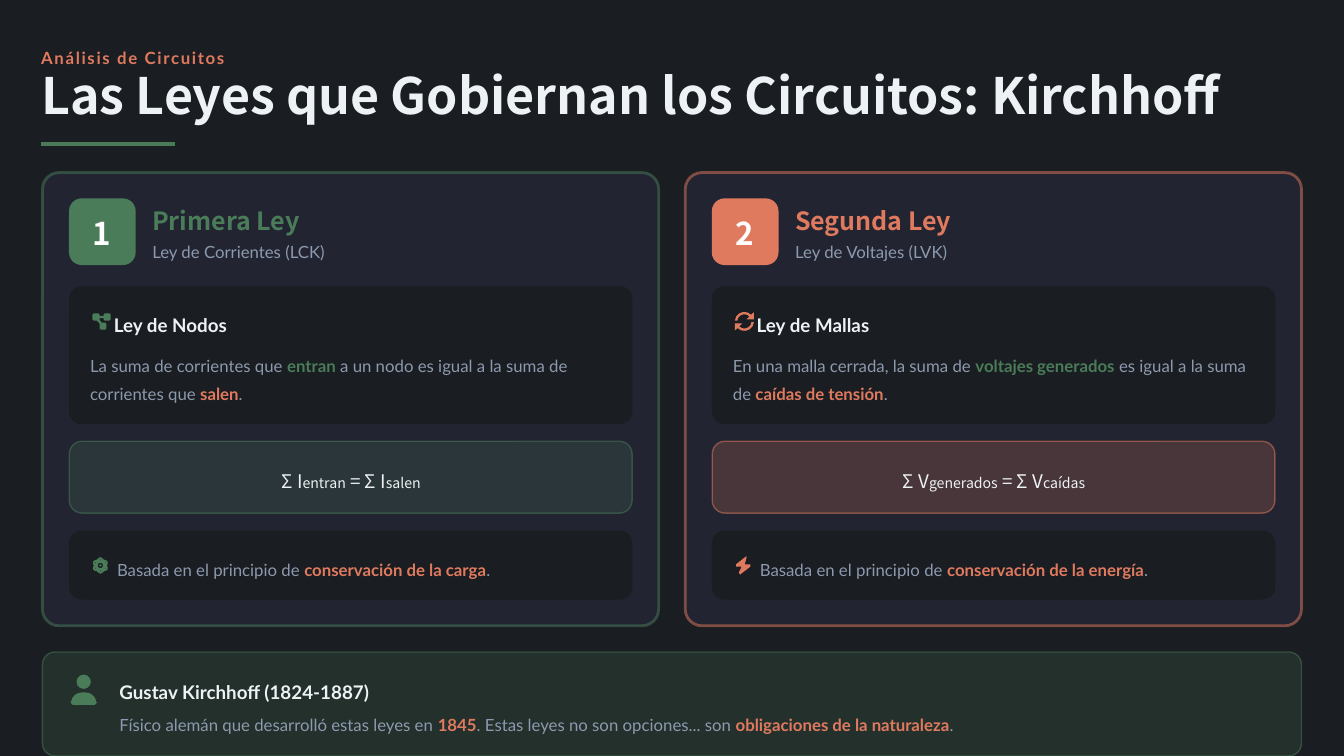
from math import cos, sin, radians

from pptx import Presentation
from pptx.dml.color import RGBColor
from pptx.enum.shapes import MSO_SHAPE as SHAPE
from pptx.enum.text import MSO_ANCHOR as ANCHOR, PP_ALIGN as ALIGN
from pptx.oxml import parse_xml
from pptx.oxml.ns import nsdecls, qn
from pptx.util import Cm, Pt

DARK = RGBColor(0x1A, 0x1D, 0x21)
NAVY = RGBColor(0x2B, 0x2D, 0x42)
GREEN = RGBColor(0x4A, 0x7C, 0x59)
CORAL = RGBColor(0xE0, 0x7A, 0x5F)
LIGHT = RGBColor(0xED, 0xF2, 0xF4)
GREY = RGBColor(0x8D, 0x99, 0xAE)
WHITE = RGBColor(0xFF, 0xFF, 0xFF)
BODY, DISPLAY = "Lato", "Noto Sans CJK SC"

# Content: a run is (text, style)
STYLES = {
    "plain": {},
    "green": {"color": GREEN, "bold": True},
    "coral": {"color": CORAL, "bold": True},
    "sub": {"size": 10.1},
}
KICKER = "Análisis de Circuitos"
TITLE = "Las Leyes que Gobiernan los Circuitos: Kirchhoff"
LAWS = [
    {"color": GREEN, "name": "Primera Ley", "subtitle": "Ley de Corrientes (LCK)",
     "icons": ("nodes", "atom"), "rule": "Ley de Nodos",
     "text": [("La suma de corrientes que ", "plain"), ("entran", "green"),
              (" a un nodo es igual a la suma de corrientes que ", "plain"),
              ("salen", "coral"), (".", "plain")],
     "formula": [("Σ I", "plain"), ("entran", "sub"), (" = Σ I", "plain"), ("salen", "sub")],
     "principle": "conservación de la carga"},
    {"color": CORAL, "name": "Segunda Ley", "subtitle": "Ley de Voltajes (LVK)",
     "icons": ("loop", "bolt"), "rule": "Ley de Mallas",
     "text": [("En una malla cerrada, la suma de ", "plain"), ("voltajes generados", "green"),
              (" es igual a la suma de ", "plain"),
              ("caídas de tensión", "coral"), (".", "plain")],
     "formula": [("Σ V", "plain"), ("generados", "sub"), (" = Σ V", "plain"), ("caídas", "sub")],
     "principle": "conservación de la energía"},
]
AUTHOR = "Gustav Kirchhoff (1824-1887)"
AUTHOR_TEXT = [("Físico alemán que desarrolló estas leyes en ", "plain"), ("1845", "coral"),
               (". Estas leyes no son opciones... son ", "plain"),
               ("obligaciones de la naturaleza", "coral"), (".", "plain")]


# Icon outlines, in cm around the icon centre
def arc(rx, ry=None, start=0, end=360, cx=0, cy=0, step=30):
    ry = rx if ry is None else ry
    return [(cx + rx * cos(radians(a)), cy + ry * sin(radians(a)))
            for a in range(start, end + 1, step)]


def atom():
    petals = [((0.19 - 0.02 * cos(radians(6 * a))) * cos(radians(a)),
               (0.19 - 0.02 * cos(radians(6 * a))) * sin(radians(a)))
              for a in range(0, 360, 15)]
    holes = [arc(0.02, cx=0.14 * cos(radians(a)), cy=0.14 * sin(radians(a)), step=120)
             for a in range(30, 390, 60)]
    return [petals, *holes, arc(0.07, step=45), arc(0.03, step=60)]


def loop():
    arrow = (arc(0.24, start=185, end=315, step=26)
             + [(0.24, -0.23), (0.24, -0.05), (0.05, -0.05)]
             + arc(0.18, start=185, end=315, step=26)[::-1])
    return [arrow, [(-x, -y) for x, y in arrow]]


NODES = [(-0.23, -0.17), (-0.2, -0.2), (-0.08, -0.2), (-0.05, -0.17), (-0.05, -0.14),
         (0.05, -0.14), (0.05, -0.17), (0.08, -0.2), (0.2, -0.2), (0.23, -0.17),
         (0.23, -0.05), (0.2, -0.02), (0.08, -0.02), (0.05, -0.05), (0.05, -0.08),
         (-0.05, -0.08), (-0.05, -0.04), (0, 0.03), (0.09, 0.03), (0.12, 0.06),
         (0.12, 0.18), (0.09, 0.21), (-0.02, 0.21), (-0.05, 0.18), (-0.05, 0.05),
         (-0.12, -0.02), (-0.2, -0.02), (-0.23, -0.05)]
BOLT = [(0.09, -0.22), (0.04, -0.03), (0.18, -0.03), (0.18, 0.03), (-0.08, 0.23),
        (-0.11, 0.18), (-0.04, 0.03), (-0.18, 0.03), (-0.18, -0.03), (0.06, -0.22)]
PERSON_BODY = [(-0.33, 0.33), *arc(0.27, start=190, end=270, cx=-0.05, cy=0.34, step=20),
               *arc(0.27, start=270, end=350, cx=0.05, cy=0.34, step=20),
               (0.33, 0.33), (0.28, 0.38), (-0.28, 0.38)]
ICONS = {
    "nodes": [NODES],
    "loop": loop(),
    "atom": atom(),
    "bolt": [BOLT],
    "person": [arc(0.18, cy=-0.2), PERSON_BODY],
}


# Drawing helpers, lengths in cm
def set_alpha(fill_parent, percent):
    color = next(fill_parent.iter(qn("a:srgbClr")))
    color.append(parse_xml(f'<a:alpha {nsdecls("a")} val="{percent * 1000}"/>'))


def box(x, y, w, h, fill, radius=0.32, alpha=None, line=None, width=1):
    kind = SHAPE.ROUNDED_RECTANGLE if radius else SHAPE.RECTANGLE
    sp = s.shapes.add_shape(kind, Cm(x), Cm(y), Cm(w), Cm(h))
    sp.shadow.inherit = False
    if radius:
        sp.adjustments[0] = radius / min(w, h)
    sp.fill.solid()
    sp.fill.fore_color.rgb = fill
    if alpha:
        set_alpha(sp._element.spPr.find(qn("a:solidFill")), alpha)
    if line is None:
        sp.line.fill.background()
    else:
        sp.line.color.rgb = line
        sp.line.width = Pt(width)
        set_alpha(sp._element.spPr.find(qn("a:ln")), 50)


def icon(name, cx, cy, color):
    contours = [[(Cm(cx + x), Cm(cy + y)) for x, y in c] for c in ICONS[name]]
    builder = s.shapes.build_freeform(*contours[0][0], scale=1.0)
    builder.add_line_segments(contours[0][1:], close=True)
    for contour in contours[1:]:
        builder.move_to(*contour[0])
        builder.add_line_segments(contour[1:], close=True)
    sp = builder.convert_to_shape()
    sp.shadow.inherit = False
    sp.fill.solid()
    sp.fill.fore_color.rgb = color
    sp.line.fill.background()


def text(x, y, w, h, runs, size=12, color=GREY, font=BODY, bold=False,
         align=ALIGN.LEFT, spacing=1.3, tracking=None):
    tf = s.shapes.add_textbox(Cm(x), Cm(y), Cm(w), Cm(h)).text_frame
    tf.word_wrap = True
    tf.vertical_anchor = ANCHOR.MIDDLE
    tf.margin_left = tf.margin_right = tf.margin_top = tf.margin_bottom = 0
    p = tf.paragraphs[0]
    p.alignment, p.line_spacing = align, spacing
    for content, style in [(runs, "plain")] if isinstance(runs, str) else runs:
        look = {"size": size, "color": color, "bold": bold, **STYLES[style]}
        r = p.add_run()
        r.text = content
        r.font.name, r.font.size = font, Pt(look["size"])
        r.font.bold, r.font.color.rgb = look["bold"], look["color"]
        if tracking:
            r._r.get_or_add_rPr().set("spc", str(int(tracking * 100)))


prs = Presentation()
prs.slide_width, prs.slide_height = Cm(33.87), Cm(19.05)
s = prs.slides.add_slide(prs.slide_layouts[6])
s.background.fill.solid()
s.background.fill.fore_color.rgb = DARK

# Heading
LEFT = 1.04
text(LEFT, 1.05, 32, 0.64, KICKER, color=CORAL, bold=True, tracking=1.2)
text(LEFT, 1.88, 32.4, 1.27, TITLE, size=35.8, color=LIGHT, font=DISPLAY, bold=True, spacing=0.8)
box(LEFT, 3.58, 3.37, 0.1, GREEN, radius=0)

# One card per law
CARD_LEFT, PITCH = 1.07, 16.2
for i, law in enumerate(LAWS):
    x, color = CARD_LEFT + i * PITCH, law["color"]
    inner, inner_w = x + 0.67, 14.2
    box(x, 4.35, 15.53, 11.42, NAVY, radius=0.42, alpha=50, line=color, width=2)

    box(inner, 5, 1.68, 1.68, color)
    text(x + 1.26, 5.39, 0.86, 0.94, str(i + 1), size=22.4, color=WHITE, font=DISPLAY,
         bold=True, spacing=1.0)
    text(x + 2.77, 5.11, 12, 0.84, law["name"], size=17.9, color=color, font=DISPLAY,
         bold=True, spacing=1.1)
    text(x + 2.77, 5.95, 12, 0.64, law["subtitle"])

    box(inner, 7.21, inner_w, 3.48, DARK)
    icon(law["icons"][0], x + 1.49, 8.1, color)
    text(x + 1.8, 7.73, 12.8, 0.74, law["rule"], size=13.4, color=LIGHT, bold=True)
    text(x + 1.2, 8.79, 13.36, 1.37, law["text"], spacing=1.4)

    box(inner + 0.01, 11.12, inner_w - 0.02, 1.81, color, alpha=20, line=color)
    text(x + 1.11, 11.66, 13.34, 0.74, law["formula"], size=13.4, color=LIGHT, font=DISPLAY,
         align=ALIGN.CENTER)

    box(inner, 13.37, inner_w, 1.74, DARK)
    icon(law["icons"][1], x + 1.46, 14.25, color)
    text(x + 1.88, 13.9, 12.67, 0.69,
         [("Basada en el principio de ", "plain"), (law["principle"], "coral"), (".", "plain")],
         spacing=1.4)

# Author strip
box(CARD_LEFT, 16.43, 31.73, 2.62, GREEN, alpha=20, line=GREEN)
icon("person", 2.11, 17.38, GREEN)
text(3.01, 16.99, 22.6, 0.74, AUTHOR, size=13.4, color=LIGHT, bold=True)
text(3.01, 17.82, 22.6, 0.69, AUTHOR_TEXT, spacing=1.4)

prs.save("out.pptx")
